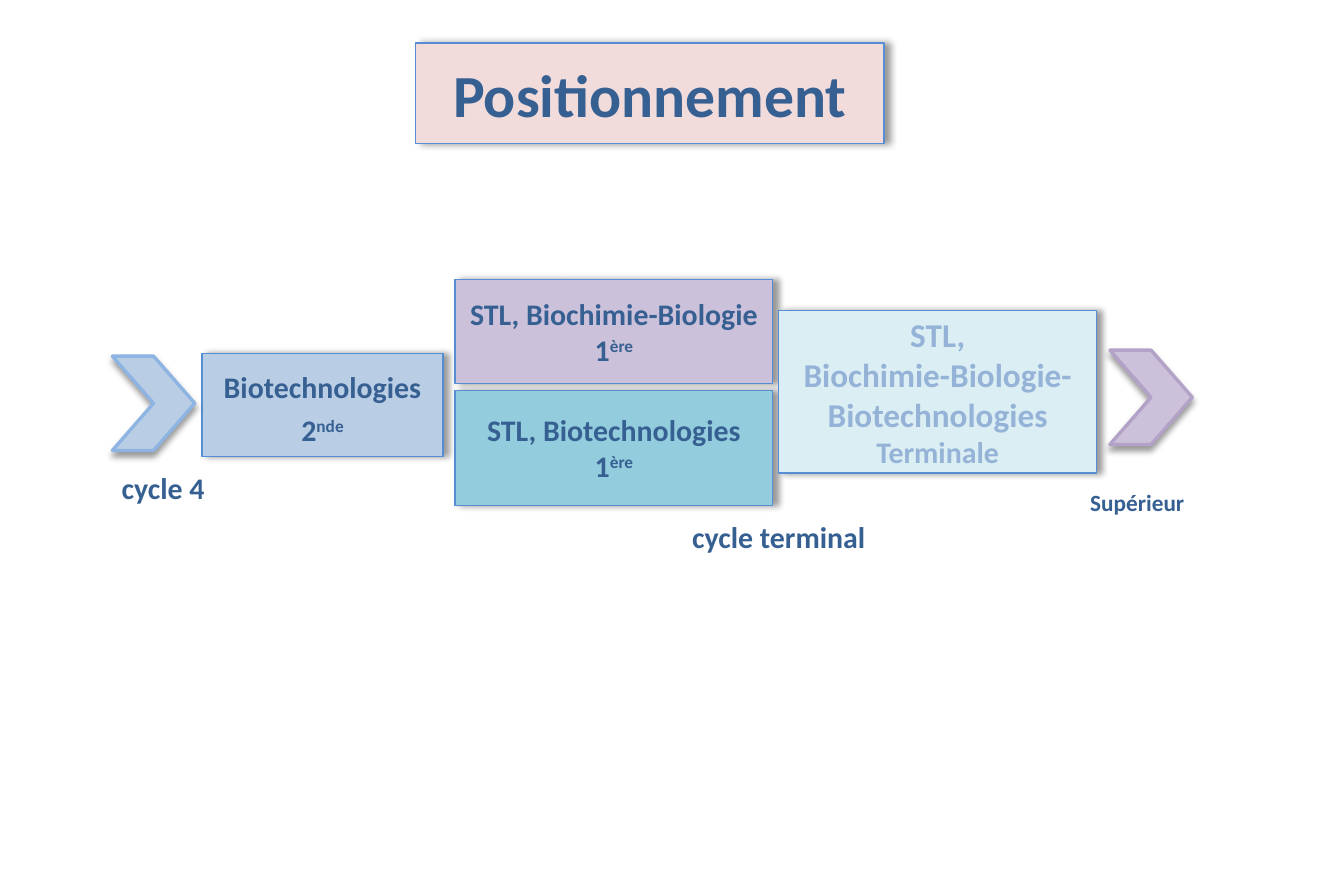
"""Build the slide that places the biotechnology courses between cycle 4 and higher education."""
from dataclasses import dataclass

import lxml.etree
import pptx
import pptx.dml.color
import pptx.enum.shapes
import pptx.enum.text
import pptx.oxml.ns
import pptx.util

Pt = pptx.util.Pt
MSO_SHAPE = pptx.enum.shapes.MSO_SHAPE
PP_ALIGN = pptx.enum.text.PP_ALIGN

COLORS = {
    "ink": "376092",
    "pale ink": "95B3D7",
    "outline": "558ED5",
    "rose": "F2DCDB",
    "blue": "B9CDE5",
    "blue edge": "8EB4E3",
    "violet": "CCC1DA",
    "violet edge": "B3A2C7",
    "teal": "93CDDD",
    "ice": "DBEEF4",
}
FONT = "Calibri"
COURSE_WIDTH = 191.5
FIRST_YEAR_LEFT = 274.3
CHEVRON_SIZE = (49.7, 56.9)


@dataclass(frozen=True)
class Line:
    """A line of text, where ^ starts a superscript."""
    text: str
    size: float
    ink: str = "ink"
    spacing: float = 1.0
    align: PP_ALIGN = PP_ALIGN.CENTER


@dataclass(frozen=True)
class Box:
    """A filled rectangle with centred lines."""
    left: float
    top: float
    width: float
    height: float
    fill: str
    lines: tuple[Line, ...]


@dataclass(frozen=True)
class Chevron:
    """An arrow leading into or out of the courses."""
    left: float
    top: float
    fill: str
    edge: str


@dataclass(frozen=True)
class Caption:
    """A free line of text under the courses."""
    left: float
    top: float
    width: float
    height: float
    line: Line


BOXES = (
    Box(250.6, 25.9, 282.2, 60.5, "rose", (Line("Positionnement", 36),)),
    Box(121.7, 213.1, 145.4, 61.9, "blue",
        (Line("Biotechnologies", 18, spacing=1.2), Line("2^nde", 18, spacing=1.2))),
    Box(FIRST_YEAR_LEFT, 168.5, COURSE_WIDTH, 62.6, "violet",
        (Line("STL, Biochimie-Biologie", 18), Line("1^ère", 18))),
    Box(FIRST_YEAR_LEFT, 235.4, COURSE_WIDTH, 69.1, "teal",
        (Line("STL, Biotechnologies", 18), Line("1^ère", 18))),
    Box(469.4, 187.2, COURSE_WIDTH, 97.9, "ice",
        (Line("STL,", 20, "pale ink"),
         Line("Biochimie-Biologie-Biotechnologies", 20, "pale ink"),
         Line("Terminale", 18, "pale ink"))),
)
CHEVRONS = (
    Chevron(67.7, 214.6, "blue", "blue edge"),
    Chevron(668.9, 211, "violet", "violet edge"),
)
CAPTIONS = (
    Caption(66.2, 279.4, 77.8, 28.8, Line("cycle 4", 18, align=PP_ALIGN.LEFT)),
    Caption(647.3, 290.9, 76.3, 24.5, Line("Supérieur", 14)),
    Caption(404.6, 308.9, 129.6, 28.8, Line("cycle terminal", 18)),
)


def rgb(name: str) -> pptx.dml.color.RGBColor:
    return pptx.dml.color.RGBColor.from_string(COLORS[name])


def write_lines(frame, lines: tuple[Line, ...]) -> None:
    frame.word_wrap = True
    for index, line in enumerate(lines):
        paragraph = frame.paragraphs[0] if index == 0 else frame.add_paragraph()
        paragraph.alignment = line.align
        paragraph.line_spacing = line.spacing
        paragraph.font.name = FONT
        paragraph.font.size = Pt(line.size)
        paragraph.font.bold = True
        paragraph.font.color.rgb = rgb(line.ink)
        base, _, superscript = line.text.partition("^")
        paragraph.add_run().text = base
        if superscript:
            raised = paragraph.add_run()
            raised.text = superscript
            raised._r.get_or_add_rPr().set("baseline", "30000")


def add_shadow(shape, degrees: int) -> None:
    shape.shadow.inherit = False
    effects = shape._element.spPr.find(pptx.oxml.ns.qn("a:effectLst"))
    outer = lxml.etree.SubElement(
        effects, pptx.oxml.ns.qn("a:outerShdw"), blurRad=str(Pt(4)),
        dist=str(Pt(3)), dir=str(degrees * 60000), rotWithShape="0")
    black = lxml.etree.SubElement(outer, pptx.oxml.ns.qn("a:srgbClr"), val="000000")
    lxml.etree.SubElement(black, pptx.oxml.ns.qn("a:alpha"), val="40000")


def add_filled(slide, kind: MSO_SHAPE, bounds: tuple[float, ...], fill: str,
               edge: str, edge_width: float, shadow_degrees: int):
    shape = slide.shapes.add_shape(kind, *map(Pt, bounds))
    shape.fill.solid()
    shape.fill.fore_color.rgb = rgb(fill)
    shape.line.color.rgb = rgb(edge)
    shape.line.width = Pt(edge_width)
    add_shadow(shape, shadow_degrees)
    return shape


def draw_box(slide, box: Box) -> None:
    bounds = (box.left, box.top, box.width, box.height)
    shape = add_filled(slide, MSO_SHAPE.RECTANGLE, bounds, box.fill, "outline", 0.75, 0)
    shape.text_frame.vertical_anchor = pptx.enum.text.MSO_ANCHOR.MIDDLE
    write_lines(shape.text_frame, box.lines)


def draw_chevron(slide, chevron: Chevron) -> None:
    bounds = (chevron.left, chevron.top, *CHEVRON_SIZE)
    add_filled(slide, MSO_SHAPE.CHEVRON, bounds, chevron.fill, chevron.edge, 2, 90)


def draw_caption(slide, caption: Caption) -> None:
    bounds = (caption.left, caption.top, caption.width, caption.height)
    frame = slide.shapes.add_textbox(*map(Pt, bounds)).text_frame
    frame.auto_size = pptx.enum.text.MSO_AUTO_SIZE.SHAPE_TO_FIT_TEXT
    write_lines(frame, (caption.line,))


def main() -> None:
    deck = pptx.Presentation()
    deck.slide_width, deck.slide_height = Pt(810), Pt(540)
    slide = deck.slides.add_slide(deck.slide_layouts[6])
    for box in BOXES:
        draw_box(slide, box)
    for chevron in CHEVRONS:
        draw_chevron(slide, chevron)
    for caption in CAPTIONS:
        draw_caption(slide, caption)
    deck.save("out.pptx")


if __name__ == "__main__":
    main()
